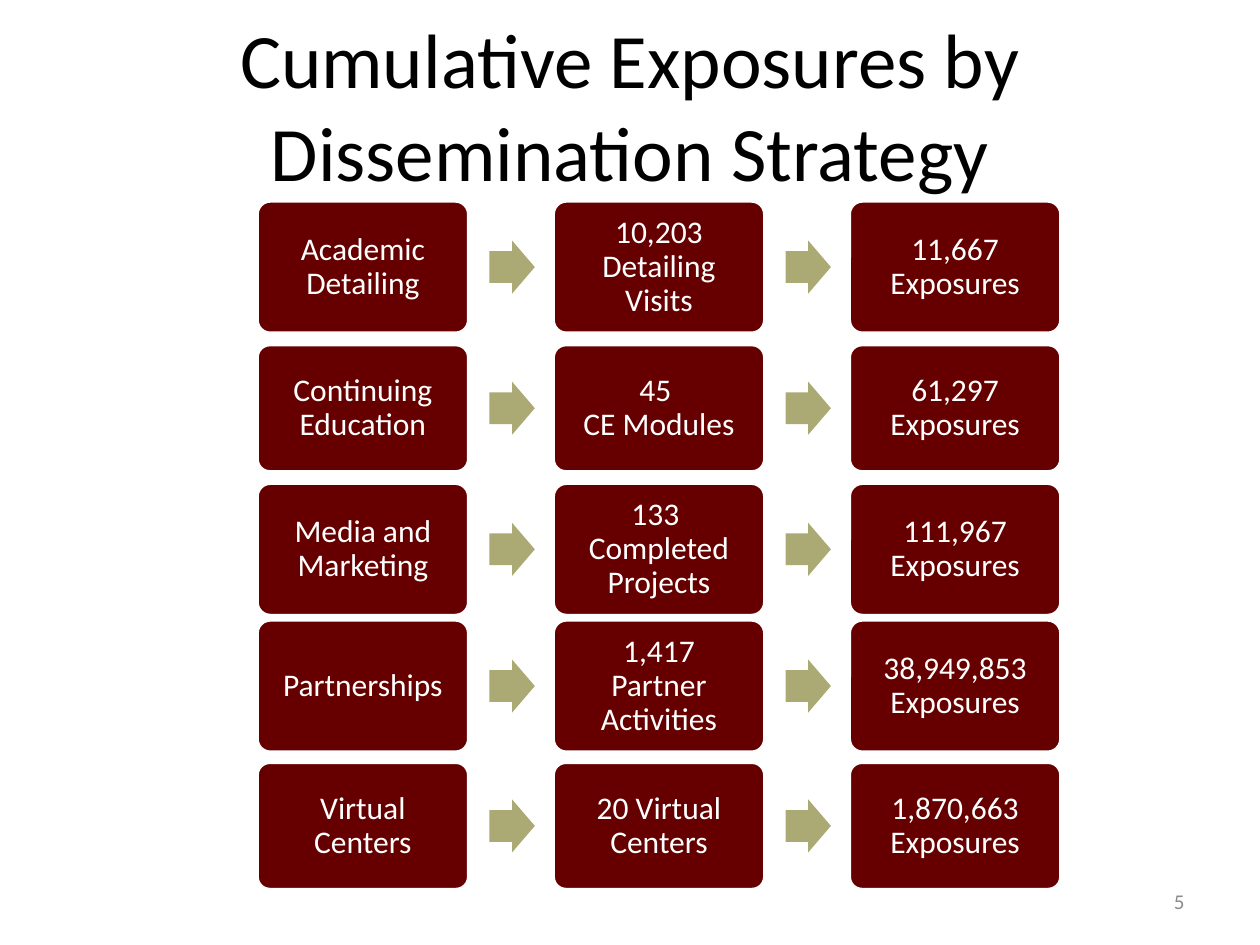
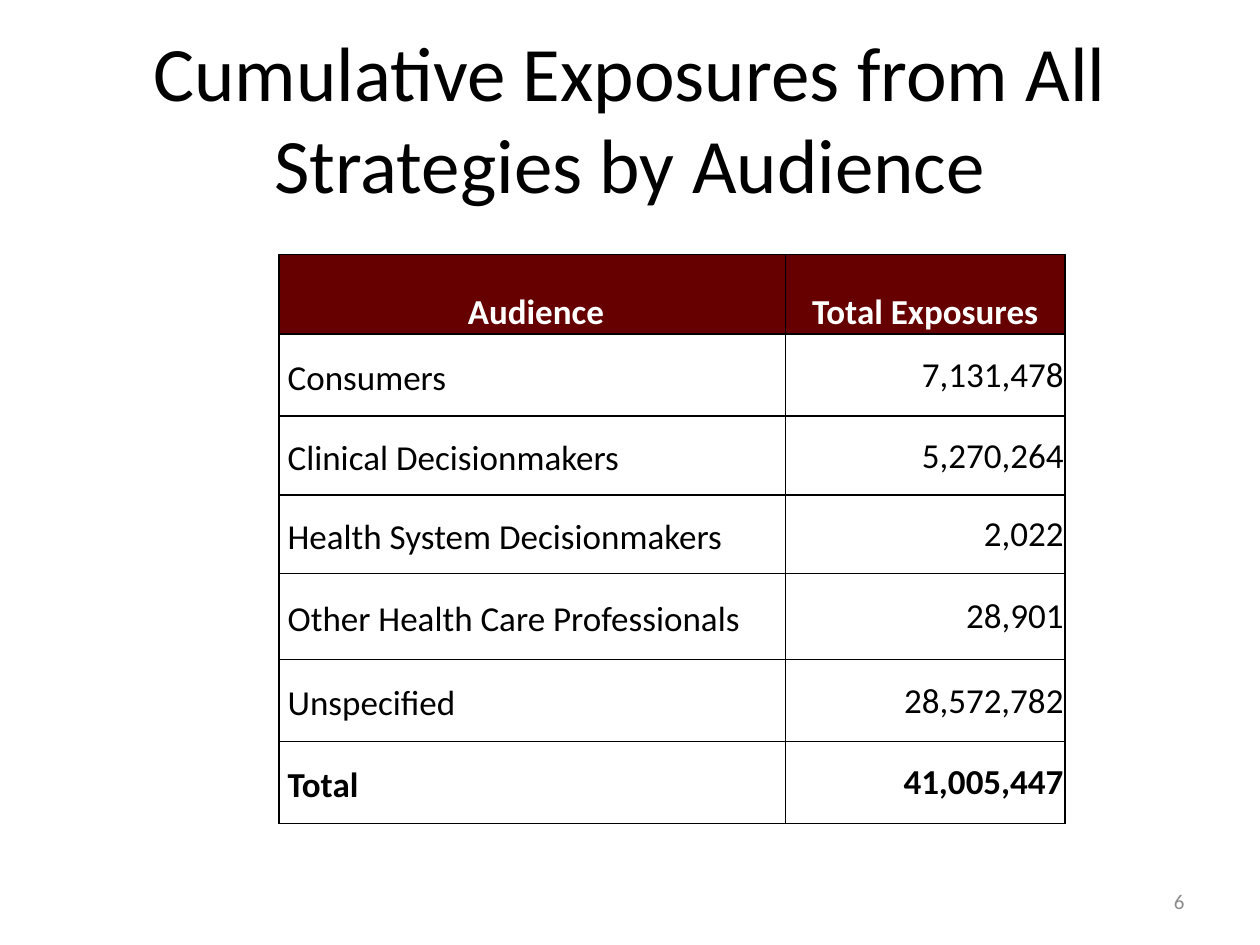
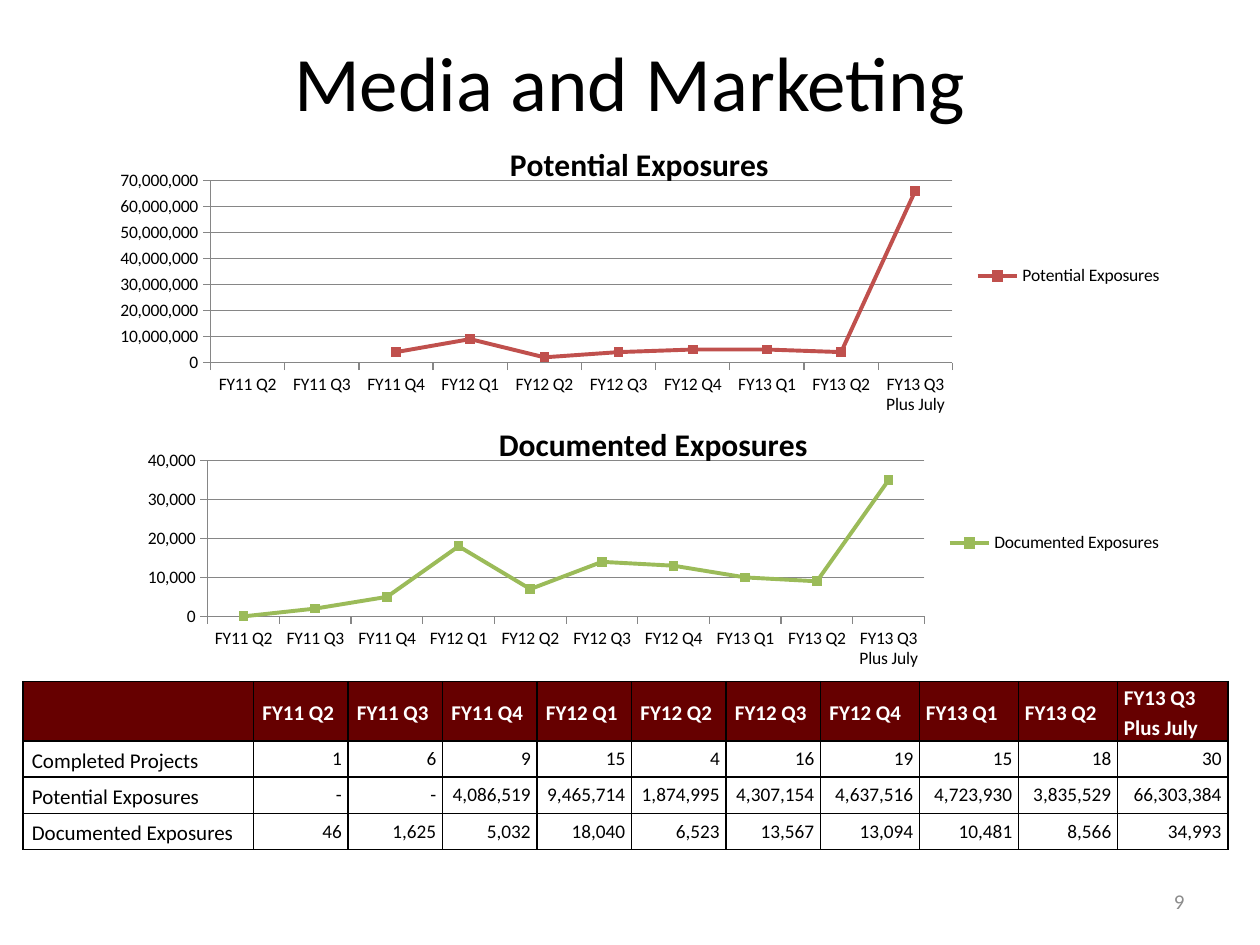
from dataclasses import dataclass, replace

from lxml.etree import SubElement
from pptx import Presentation
from pptx.chart.data import CategoryChartData
from pptx.dml.color import RGBColor
from pptx.enum.chart import XL_CHART_TYPE, XL_LEGEND_POSITION, XL_MARKER_STYLE, XL_TICK_MARK
from pptx.enum.shapes import MSO_SHAPE
from pptx.enum.text import MSO_ANCHOR, MSO_AUTO_SIZE, PP_ALIGN
from pptx.oxml import parse_xml
from pptx.oxml.ns import nsdecls, qn
from pptx.util import Emu, Inches, Pt

# Shared look
FONT = "Calibri"
COLORS = {
    "maroon": "660000",
    "khaki": "ABAA75",
    "white": "FFFFFF",
    "black": "000000",
    "number": "8C8C8C",
    "grid": "868686",
    "potential": "C0504D",
    "documented": "9BBB59",
}

# Slide grid: 100 columns by 75 rows
WIDTH, HEIGHT = Inches(10), Inches(7.5)


def cols(count: float) -> Emu:
    return Emu(round(WIDTH * count / 100))


def rows(count: float) -> Emu:
    return Emu(round(HEIGHT * count / 75))


def rgb(name: str) -> RGBColor:
    return RGBColor.from_string(COLORS[name])


@dataclass(frozen=True)
class Box:
    """Area in grid columns and rows."""
    left: float
    top: float
    width: float
    height: float

    def place(self) -> tuple:
        return cols(self.left), rows(self.top), cols(self.width), rows(self.height)


@dataclass(frozen=True)
class Strategy:
    name: str
    activity: str
    exposures: str
    top: float
    height: float


@dataclass(frozen=True)
class CellStyle:
    size: float
    align: PP_ALIGN
    anchor: MSO_ANCHOR
    margins: tuple  # left and right in columns, top and bottom in rows
    spacing: float = 1.0
    color: str = "black"
    fill: str = ""


@dataclass(frozen=True)
class TableLook:
    header: CellStyle
    label: CellStyle
    value: CellStyle
    bold_total: bool = False


@dataclass(frozen=True)
class Trend:
    title: str
    color: str
    area: Box
    plot: tuple  # x, y, width and height as shares of the chart
    top_value: int
    step: int
    digits: int  # digits rounded off the charted values


# Slide content
STRATEGIES = [
    Strategy("Academic Detailing", "10,203\nDetailing Visits", "11,667", 15.95, 10.5),
    Strategy("Continuing Education", "45 \nCE Modules", "61,297", 27.35, 10.1),
    Strategy("Media and Marketing", "133 \nCompleted Projects", "111,967", 38.35, 10.5),
    Strategy("Partnerships", "1,417\nPartner Activities", "38,949,853", 49.2, 10.5),
    Strategy("Virtual Centers", "20 Virtual Centers", "1,870,663", 60.5, 10.1),
]
CARD_LEFT, CARD_WIDTH, CARD_PITCH = 20.4, 16.8, 23.5
ARROW_OFFSET, ARROW_WIDTH, ARROW_HEIGHT = 18.45, 3.6, 4.2

AUDIENCES = [
    [" Audience", "Total Exposures"],
    ["Consumers", "7,131,478"],
    ["Clinical Decisionmakers", "5,270,264"],
    ["Health System Decisionmakers", "2,022"],
    ["Other Health Care Professionals", "28,901"],
    ["Unspecified", "28,572,782"],
    ["Total", "41,005,447"],
]
QUARTERS = ["FY11 Q2", "FY11 Q3", "FY11 Q4", "FY12 Q1", "FY12 Q2", "FY12 Q3",
            "FY12 Q4", "FY13 Q1", "FY13 Q2", "FY13 Q3 Plus July"]
MEDIA_RESULTS = {
    "Completed Projects": ["1", "6", "9", "15", "4", "16", "19", "15", "18", "30"],
    "Potential Exposures": ["-", "-", "4,086,519", "9,465,714", "1,874,995", "4,307,154",
                            "4,637,516", "4,723,930", "3,835,529", "66,303,384"],
    "Documented Exposures": ["46", "1,625", "5,032", "18,040", "6,523", "13,567",
                             "13,094", "10,481", "8,566", "34,993"],
}
TRENDS = [
    Trend("Potential Exposures", "potential", Box(8.2, 9.85, 85.1, 24.1),
          (0.1, 0.185, 0.692, 0.601), 70_000_000, 10_000_000, 6),
    Trend("Documented Exposures", "documented", Box(10.45, 32.1, 82.8, 22),
          (0.073, 0.203, 0.687, 0.562), 40_000, 10_000, 3),
]

LABEL_MARGINS = (0.7, 0.7, 0, 0)
NARROW_MARGINS = (0.5, 0.5, 0, 0)
AUDIENCE_LOOK = TableLook(
    header=CellStyle(20, PP_ALIGN.CENTER, MSO_ANCHOR.BOTTOM, LABEL_MARGINS, 1.15, "white", "maroon"),
    label=CellStyle(20, PP_ALIGN.LEFT, MSO_ANCHOR.MIDDLE, LABEL_MARGINS, 1.15),
    value=CellStyle(20, PP_ALIGN.RIGHT, MSO_ANCHOR.MIDDLE, (0.1, 0.1, 0.1, 0)),
    bold_total=True,
)
MEDIA_LOOK = TableLook(
    header=CellStyle(12, PP_ALIGN.LEFT, MSO_ANCHOR.MIDDLE, LABEL_MARGINS, 1.15, "white", "maroon"),
    label=CellStyle(12, PP_ALIGN.LEFT, MSO_ANCHOR.MIDDLE, LABEL_MARGINS, 1.15),
    value=CellStyle(11, PP_ALIGN.RIGHT, MSO_ANCHOR.BOTTOM, (0.5, 0.5, 0.5, 0.5)),
)


def format_text(frame, size: float, color: str, align: PP_ALIGN,
                spacing: float = 1.0, bold: bool = False) -> None:
    for paragraph in frame.paragraphs:
        paragraph.alignment = align
        paragraph.line_spacing = spacing
        for run in paragraph.runs:
            run.font.name = FONT
            run.font.size = Pt(size)
            run.font.bold = bold
            run.font.color.rgb = rgb(color)


def add_titled_slide(deck, title: str, area: Box, number: int):
    slide = deck.slides.add_slide(deck.slide_layouts.get_by_name("Title Only"))
    heading = slide.shapes.title
    heading.left, heading.top, heading.width, heading.height = area.place()
    frame = heading.text_frame
    frame.text = title
    frame.auto_size = MSO_AUTO_SIZE.NONE
    frame.vertical_anchor = MSO_ANCHOR.MIDDLE
    format_text(frame, 44, "black", PP_ALIGN.CENTER)

    # Slide number
    page = slide.shapes.add_textbox(*Box(71.7, 69.5, 23.3, 4).place()).text_frame
    page.word_wrap = True
    page.vertical_anchor = MSO_ANCHOR.MIDDLE
    page.text = str(number)
    format_text(page, 12, "number", PP_ALIGN.RIGHT)
    return slide


def add_block(slide, kind: MSO_SHAPE, area: Box, fill: str, adjustments: tuple):
    block = slide.shapes.add_shape(kind, *area.place())
    block.shadow.inherit = False
    block.fill.solid()
    block.fill.fore_color.rgb = rgb(fill)
    block.line.fill.background()
    for index, value in enumerate(adjustments):
        block.adjustments[index] = value
    return block


def add_card(slide, text: str, area: Box) -> None:
    card = add_block(slide, MSO_SHAPE.ROUNDED_RECTANGLE, area, "maroon", (0.1,))
    card.line.color.rgb = rgb("white")
    card.line.width = Pt(2)
    frame = card.text_frame
    frame.word_wrap = True
    frame.vertical_anchor = MSO_ANCHOR.MIDDLE
    frame.margin_left = frame.margin_right = cols(0.7)
    frame.margin_top = frame.margin_bottom = rows(0.7)
    frame.text = text
    format_text(frame, 18, "white", PP_ALIGN.CENTER, 0.9)


def add_strategy(slide, strategy: Strategy) -> None:
    steps = (strategy.name, strategy.activity, f"{strategy.exposures} Exposures")
    arrow_top = strategy.top + (strategy.height - ARROW_HEIGHT) / 2
    for index, step in enumerate(steps):
        left = CARD_LEFT + index * CARD_PITCH
        add_card(slide, step, Box(left, strategy.top, CARD_WIDTH, strategy.height))
        if index < len(steps) - 1:
            arrow = Box(left + ARROW_OFFSET, arrow_top, ARROW_WIDTH, ARROW_HEIGHT)
            add_block(slide, MSO_SHAPE.RIGHT_ARROW, arrow, "khaki", (0.6, 0.5))


def add_borders(cell) -> None:
    properties = cell._tc.get_or_add_tcPr()
    for side in ("lnL", "lnR", "lnT", "lnB"):
        border = SubElement(properties, qn(f"a:{side}"), w=str(Pt(1)))
        fill = SubElement(border, qn("a:solidFill"))
        SubElement(fill, qn("a:srgbClr"), val=COLORS["black"])


def fill_cell(cell, text: str, style: CellStyle, bold: bool) -> None:
    add_borders(cell)
    if style.fill:
        cell.fill.solid()
        cell.fill.fore_color.rgb = rgb(style.fill)
    else:
        cell.fill.background()
    left, right, top, bottom = style.margins
    cell.margin_left, cell.margin_right = cols(left), cols(right)
    cell.margin_top, cell.margin_bottom = rows(top), rows(bottom)
    cell.vertical_anchor = style.anchor
    cell.text_frame.text = text
    format_text(cell.text_frame, style.size, style.color, style.align, style.spacing, bold)


def add_data_table(slide, records: list, left: float, top: float,
                   widths: list, heights: list, look: TableLook) -> None:
    area = Box(left, top, sum(widths), sum(heights))
    table = slide.shapes.add_table(len(heights), len(widths), *area.place()).table
    table.horz_banding = False
    for column, width in zip(table.columns, widths):
        column.width = cols(width)
    for row, height in zip(table.rows, heights):
        row.height = rows(height)
    for r, record in enumerate(records):
        bold = r == 0 or (look.bold_total and r == len(records) - 1)
        for c, text in enumerate(record):
            style = look.header if r == 0 else look.value if c else look.label
            if text.startswith("FY13"):
                style = replace(style, margins=NARROW_MARGINS)
            fill_cell(table.cell(r, c), text, style, bold)


def set_plot_layout(chart, shares: tuple) -> None:
    plot_area = chart._chartSpace.chart.plotArea
    for layout in plot_area.findall(qn("c:layout")):
        plot_area.remove(layout)
    x, y, width, height = shares
    plot_area.insert(0, parse_xml(
        f'<c:layout {nsdecls("c")}><c:manualLayout><c:layoutTarget val="inner"/>'
        f'<c:xMode val="edge"/><c:yMode val="edge"/><c:x val="{x}"/><c:y val="{y}"/>'
        f'<c:w val="{width}"/><c:h val="{height}"/></c:manualLayout></c:layout>'))


def add_trend(slide, trend: Trend) -> None:
    data = CategoryChartData(number_format="#,##0")
    data.categories = QUARTERS
    data.add_series(trend.title, [
        None if text == "-" else round(int(text.replace(",", "")), -trend.digits)
        for text in MEDIA_RESULTS[trend.title]])
    chart = slide.shapes.add_chart(XL_CHART_TYPE.LINE_MARKERS, *trend.area.place(), data).chart
    chart.font.name = FONT
    chart.font.size = Pt(10)
    chart.font.color.rgb = rgb("black")

    chart.has_title = True
    chart.chart_title.text_frame.text = trend.title
    format_text(chart.chart_title.text_frame, 18, "black", PP_ALIGN.CENTER, bold=True)
    chart.has_legend = True
    chart.legend.position = XL_LEGEND_POSITION.RIGHT
    chart.legend.include_in_layout = False
    set_plot_layout(chart, trend.plot)

    # Axes and gridlines
    amounts = chart.value_axis
    amounts.minimum_scale, amounts.maximum_scale = 0, trend.top_value
    amounts.major_unit = trend.step
    amounts.has_major_gridlines = True
    amounts.tick_labels.number_format = "#,##0"
    amounts.tick_labels.number_format_is_linked = False
    for axis in (chart.category_axis, amounts):
        axis.major_tick_mark = XL_TICK_MARK.OUTSIDE
        axis.minor_tick_mark = XL_TICK_MARK.NONE
    for rule in (chart.category_axis.format.line, amounts.format.line,
                 amounts.major_gridlines.format.line):
        rule.color.rgb = rgb("grid")
        rule.width = Pt(0.75)

    # Line and markers
    chart.plots[0].vary_by_categories = False
    exposures = chart.plots[0].series[0]
    exposures.smooth = False
    exposures.format.line.color.rgb = rgb(trend.color)
    exposures.format.line.width = Pt(2.25)
    marker = exposures.marker
    marker.style = XL_MARKER_STYLE.SQUARE
    marker.size = 5
    marker.format.fill.solid()
    marker.format.fill.fore_color.rgb = rgb(trend.color)
    marker.format.line.color.rgb = rgb(trend.color)


def main() -> None:
    deck = Presentation()
    deck.slide_width, deck.slide_height = WIDTH, HEIGHT

    # Exposures by strategy
    by_strategy = add_titled_slide(
        deck, "Cumulative Exposures by Dissemination Strategy", Box(5, 3, 90, 10.55), 5)
    for strategy in STRATEGIES:
        add_strategy(by_strategy, strategy)

    # Exposures by audience
    by_audience = add_titled_slide(
        deck, "Cumulative Exposures from All Strategies by Audience", Box(5, 3, 90, 12.5), 6)
    add_data_table(by_audience, AUDIENCES, 22.13, 20.2, [40.2, 22.2],
                   [6.3, 6.5, 6.3, 6.2, 6.85, 6.5, 6.5], AUDIENCE_LOOK)

    # Media and marketing by quarter
    media = add_titled_slide(deck, "Media and Marketing", Box(5, 1.5, 90, 9.8), 9)
    records = [["", *QUARTERS]] + [[name, *values] for name, values in MEDIA_RESULTS.items()]
    add_data_table(media, records, 1.83, 54.1, [18.3] + [7.5] * 6 + [7.86] * 3 + [8.75],
                   [4.7] + [2.88] * 3, MEDIA_LOOK)
    for trend in TRENDS:
        add_trend(media, trend)

    deck.save("out.pptx")


if __name__ == "__main__":
    main()
